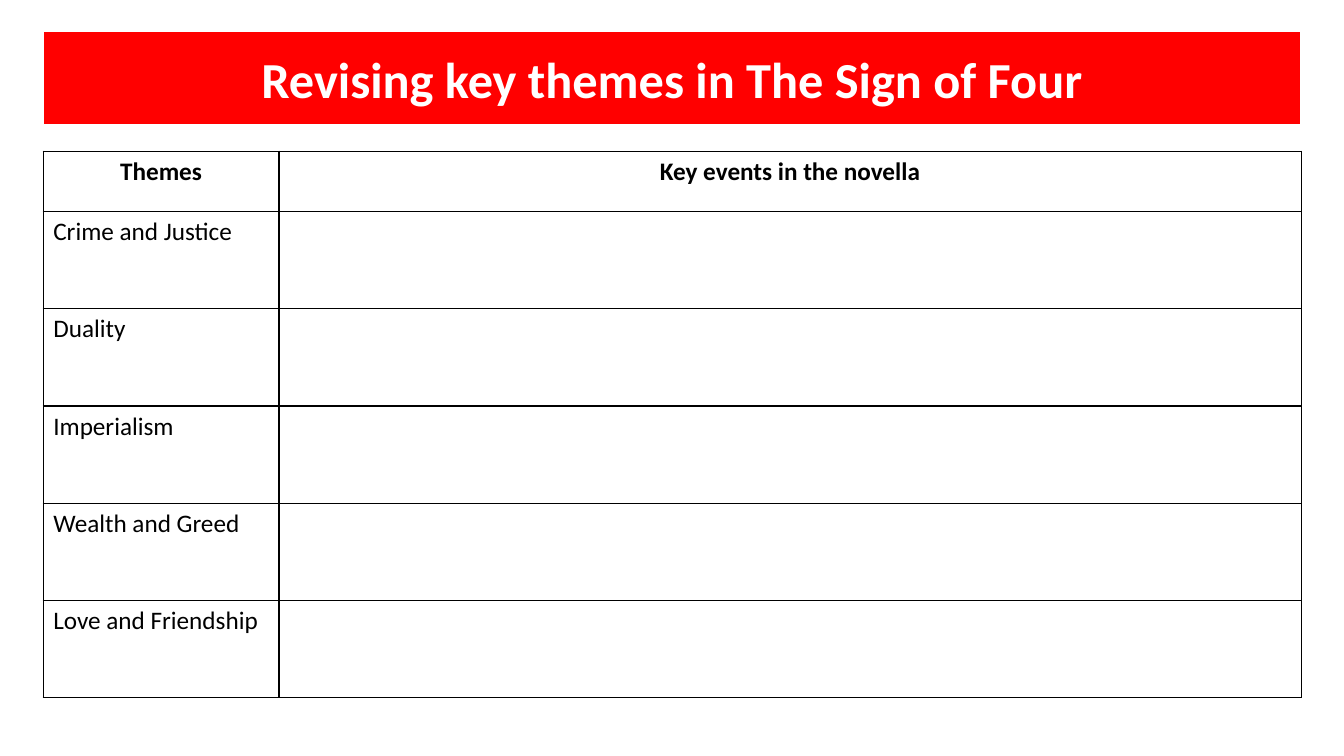
from lxml import etree
from pptx import Presentation
from pptx import util as u
from pptx.dml.color import RGBColor
from pptx.enum import text
from pptx.oxml import ns

INK = {"red": "FF0000", "white": "FFFFFF", "black": "000000"}
FONT = "Calibri"
LEFT, WIDTH = u.Cm(1.09), u.Cm(31.7)
COLS = [u.Cm(5.94), u.Cm(25.76)]
HEAD, ROW = u.Cm(1.52), u.Cm(2.45)
HEADS = ["Themes", "Key events in the novella"]
THEMES = [
    "Crime and Justice",
    "Duality",
    "Imperialism",
    "Wealth and Greed",
    "Love and Friendship",
]


def color(name):
    return RGBColor.from_string(INK[name])


def paint(item, name):
    item.fill.solid()
    item.fill.fore_color.rgb = color(name)


def write(frame, words, size, ink, bold=False, align=text.PP_ALIGN.LEFT):
    frame.text = words
    par = frame.paragraphs[0]
    par.alignment = align
    par.font.name = FONT
    par.font.size = u.Pt(size)
    par.font.bold = bold
    par.font.color.rgb = color(ink)


def border(cell):
    props = cell._tc.get_or_add_tcPr()
    for place, side in enumerate(("lnL", "lnR", "lnT", "lnB")):
        line = etree.Element(ns.qn(f"a:{side}"), w=str(u.Pt(1)))
        fill = etree.SubElement(line, ns.qn("a:solidFill"))
        etree.SubElement(fill, ns.qn("a:srgbClr"), val=INK["black"])
        props.insert(place, line)


def add_title(slide, words):
    title = slide.shapes.title
    title.left, title.top = LEFT, u.Cm(0.79)
    title.width, title.height = WIDTH, u.Cm(2.36)
    paint(title, "red")
    title.line.color.rgb = color("white")
    title.line.width = u.Pt(1.5)
    frame = title.text_frame
    frame.auto_size = text.MSO_AUTO_SIZE.NONE
    frame.vertical_anchor = text.MSO_ANCHOR.MIDDLE
    write(frame, words, 36, "white", True, text.PP_ALIGN.CENTER)


def add_grid(slide, rows):
    height = HEAD + ROW * (len(rows) - 1)
    table = slide.shapes.add_table(
        len(rows), len(COLS), LEFT, u.Cm(3.81), WIDTH, height
    ).table
    for col, width in zip(table.columns, COLS):
        col.width = width
    for r, words in enumerate(rows):
        first = r == 0
        table.rows[r].height = HEAD if first else ROW
        align = text.PP_ALIGN.CENTER if first else text.PP_ALIGN.LEFT
        for c, word in enumerate(words):
            cell = table.cell(r, c)
            paint(cell, "white")
            border(cell)
            write(cell.text_frame, word, 18, "black", first, align)


def main():
    deck = Presentation()
    deck.slide_width, deck.slide_height = u.Cm(33.87), u.Cm(19.05)
    slide = deck.slides.add_slide(deck.slide_layouts[5])
    add_title(slide, "Revising key themes in The Sign of Four")
    add_grid(slide, [HEADS] + [[theme, ""] for theme in THEMES])
    deck.save("out.pptx")


if __name__ == "__main__":
    main()
